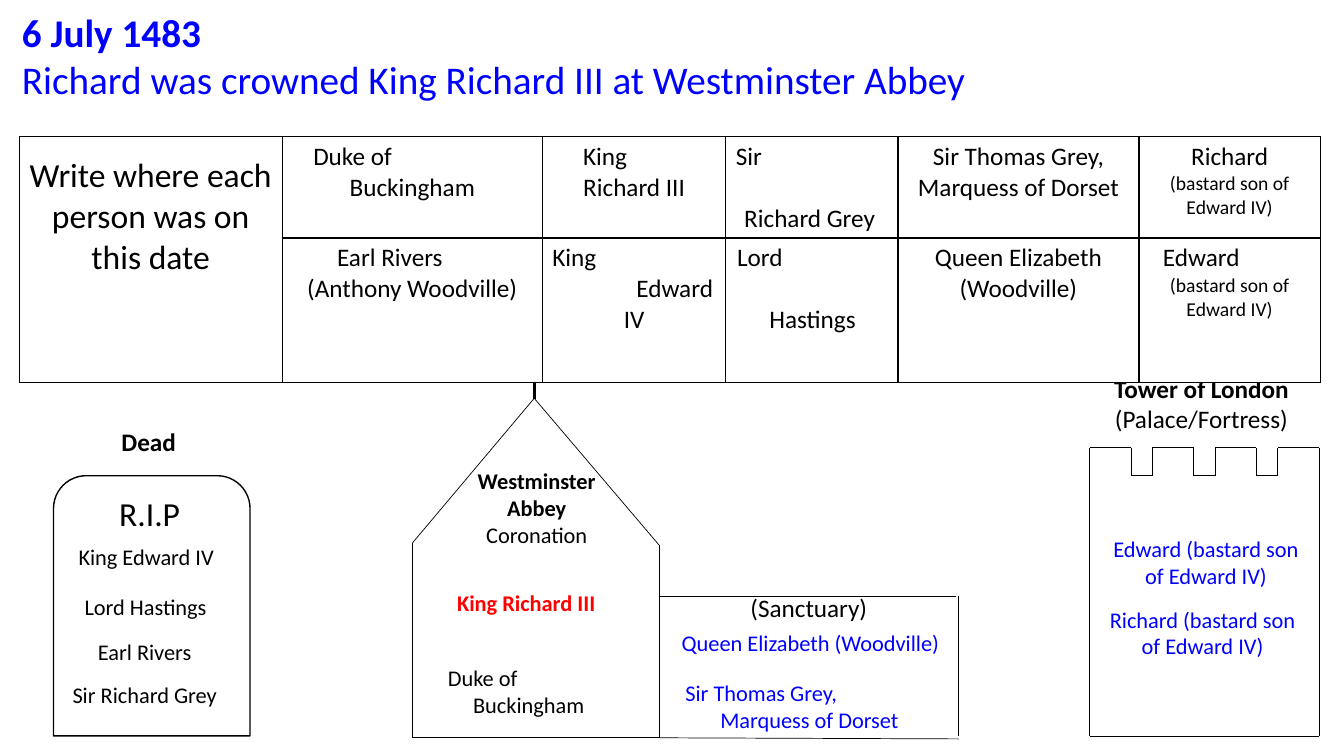
"""Build a slide placing each person on 6 July 1483."""
from dataclasses import dataclass
from itertools import pairwise

from lxml import etree
from pptx import Presentation
from pptx.dml.color import RGBColor
from pptx.enum.shapes import MSO_CONNECTOR, MSO_SHAPE
from pptx.enum.text import PP_ALIGN
from pptx.oxml.ns import qn
from pptx.util import Pt

BLACK = RGBColor(0, 0, 0)
WHITE = RGBColor(255, 255, 255)
BLUE = RGBColor(0, 0, 255)
RED = RGBColor(255, 0, 0)
FONT = "Calibri"
CENTER = PP_ALIGN.CENTER
LEFT = PP_ALIGN.LEFT
STRAIGHT = MSO_CONNECTOR.STRAIGHT
TOMBSTONE = MSO_SHAPE.ROUND_2_SAME_RECTANGLE


@dataclass(frozen=True)
class Line:
    text: str
    size: float = 16
    color: RGBColor = BLACK
    bold: bool = False
    indent: float | None = None
    before: float = 0


@dataclass(frozen=True)
class Label:
    left: float
    top: float
    width: float
    height: float
    lines: list[Line]


TITLE = Label(8.6, 2.2, 905, 90, [
    Line("6 July 1483", 28, BLUE, True, indent=0),
    Line("Richard was crowned King Richard III at Westminster Abbey", 28, BLUE, indent=0),
])
TOWER_NAME = Label(774.7, 262.8, 167, 51, [
    Line("Tower of London", 18, bold=True), Line("(Palace/Fortress)", 18),
])
LABELS = [
    Label(320.4, 330.5, 126, 67.7, [
        Line("Westminster Abbey", bold=True), Line("Coronation"),
    ]),
    Label(528.5, 419.8, 98.6, 28.8, [Line("(Sanctuary)", 18)]),
    Label(37.4, 348.5, 139, 36, [Line("R.I.P", 24)]),
    Label(36.7, 301, 139, 28.8, [Line("Dead", 18, bold=True)]),
    Label(34.6, 384.5, 139.7, 26.6, [Line("King Edward IV")]),
    Label(33.1, 419.8, 141.8, 26.6, [Line("Lord Hastings")]),
    Label(24.5, 452.2, 157.7, 26.6, [Line("Earl Rivers")]),
    Label(24.5, 483.1, 157.7, 26.6, [Line("Sir Richard Grey")]),
    Label(475.9, 445.7, 206, 26.6, [Line("Queen Elizabeth (Woodville)", color=BLUE)]),
    Label(474.5, 481.7, 207.4, 46, [
        Line("Sir Thomas Grey,", color=BLUE, indent=8),
        Line("Marquess of Dorset", color=BLUE, indent=33),
    ]),
    Label(297.4, 417.6, 157, 26.6, [Line("King Richard III", color=RED, bold=True)]),
    Label(298.8, 470.9, 157.7, 46, [
        Line("Duke of", indent=14), Line("Buckingham", indent=32),
    ]),
    Label(782.6, 378.7, 157.7, 46, [Line("Edward (bastard son of Edward IV)", color=BLUE)]),
    Label(780.5, 429.1, 157, 46, [Line("Richard (bastard son of Edward IV)", color=BLUE)]),
]

COLUMN_WIDTHS = [187.9, 185.8, 131, 123.1, 172.1, 129.6]
ROW_HEIGHTS = [72, 103]
INSTRUCTION = [Line("Write where each person was on this date", 24)]
BASTARD = Line("(bastard son of Edward IV)", 14)
PEOPLE = [
    [
        [Line("Duke of", 18, indent=15), Line("Buckingham", 18, indent=41)],
        [Line("King", 18, indent=22), Line("Richard III", 18, indent=22)],
        [Line("Sir", 18, indent=0), Line("Richard Grey", 18, indent=6, before=22)],
        [Line("Sir Thomas Grey, Marquess of Dorset", 18)],
        [Line("Richard", 18), BASTARD],
    ],
    [
        [Line("Earl Rivers", 18, indent=32), Line("(Anthony Woodville)", 18)],
        [Line("King", 18, indent=0), Line("Edward", 18, indent=60), Line("IV", 18, indent=51)],
        [Line("Lord", 18, indent=1), Line("Hastings", 18, indent=24, before=22)],
        [Line("Queen Elizabeth (Woodville)", 18)],
        [Line("Edward", 18, indent=10), BASTARD],
    ],
]

ABBEY = [(294.5, 527), (294.5, 388), (381.6, 284.5), (470.9, 389.5), (470.9, 527), (294.5, 527)]
SPIRE = [(381.6, 285), (381.6, 253)]
SANCTUARY_ROOF = [(470.5, 426.2), (682.6, 426.2)]
SANCTUARY_WALL = [(684.7, 425.5), (684.7, 525.6)]
SANCTUARY_BASE = [(470.5, 527), (684.7, 527.8)]
TOWER_LEFT, TOWER_TOP, TOWER_BASE = 778.3, 319.7, 526
MERLON, NOTCH, NOTCH_DEPTH = 29.6, 15.2, 20.2
MERLON_COUNT = 4


def tower_outline() -> list[tuple[float, float]]:
    """Return the closed outline of the tower with its battlements."""
    points = [(TOWER_LEFT, TOWER_BASE)]
    for index in range(MERLON_COUNT):
        left = TOWER_LEFT + index * (MERLON + NOTCH)
        right = left + MERLON
        if index:
            points += [(left, TOWER_TOP + NOTCH_DEPTH)]
        points += [(left, TOWER_TOP), (right, TOWER_TOP)]
        if index < MERLON_COUNT - 1:
            points += [(right, TOWER_TOP + NOTCH_DEPTH)]
    return points + [(right, TOWER_BASE), points[0]]


def draw_walls(slide, points: list[tuple[float, float]], weight: float = 0.5) -> None:
    """Join consecutive points with straight lines."""
    for (x1, y1), (x2, y2) in pairwise(points):
        wall = slide.shapes.add_connector(STRAIGHT, Pt(x1), Pt(y1), Pt(x2), Pt(y2))
        wall.line.color.rgb = BLACK
        wall.line.width = Pt(weight)
        etree.SubElement(wall._element.spPr, qn("a:effectLst"))


def write_lines(frame, lines: list[Line]) -> None:
    """Write one paragraph per line, indented or centred."""
    frame.word_wrap = True
    frame.text = "\n".join(line.text for line in lines)
    for paragraph, line in zip(frame.paragraphs, lines):
        paragraph.alignment = CENTER if line.indent is None else LEFT
        paragraph.space_before = Pt(line.before)
        if line.indent:
            paragraph._p.get_or_add_pPr().set("marL", str(Pt(line.indent)))
        font = paragraph.runs[0].font
        font.name, font.size, font.bold = FONT, Pt(line.size), line.bold
        font.color.rgb = line.color


def draw_label(slide, label: Label) -> None:
    """Draw a label in its own text box."""
    box = slide.shapes.add_textbox(
        Pt(label.left), Pt(label.top), Pt(label.width), Pt(label.height))
    write_lines(box.text_frame, label.lines)


def style_cell(cell) -> None:
    """Give a cell a white fill and thin black borders."""
    cell.fill.solid()
    cell.fill.fore_color.rgb = WHITE
    properties = cell._tc.get_or_add_tcPr()
    for index, side in enumerate(("lnL", "lnR", "lnT", "lnB")):
        border = etree.Element(qn(f"a:{side}"), w=str(Pt(1)))
        fill = etree.SubElement(border, qn("a:solidFill"))
        etree.SubElement(fill, qn("a:srgbClr"), val=str(BLACK))
        properties.insert(index, border)


def draw_people_table(slide) -> None:
    """Draw the table of people beside the instruction."""
    table = slide.shapes.add_table(
        len(ROW_HEIGHTS), len(COLUMN_WIDTHS), Pt(13.7), Pt(97.5),
        Pt(sum(COLUMN_WIDTHS)), Pt(sum(ROW_HEIGHTS))).table
    for column, width in zip(table.columns, COLUMN_WIDTHS):
        column.width = Pt(width)
    for row, height in zip(table.rows, ROW_HEIGHTS):
        row.height = Pt(height)
    for cell in table.iter_cells():
        style_cell(cell)
    instruction = table.cell(0, 0)
    instruction.merge(table.cell(1, 0))
    instruction.margin_top = Pt(13.4)
    write_lines(instruction.text_frame, INSTRUCTION)
    for row, people in enumerate(PEOPLE):
        for column, lines in enumerate(people, start=1):
            write_lines(table.cell(row, column).text_frame, lines)


def draw_tombstone(slide) -> None:
    """Draw the outline of the tombstone."""
    tombstone = slide.shapes.add_shape(TOMBSTONE, Pt(38.2), Pt(339.8), Pt(140.4), Pt(185.8))
    tombstone.shadow.inherit = False
    tombstone.fill.background()
    tombstone.line.color.rgb = BLACK
    tombstone.line.width = Pt(1)


def main() -> None:
    """Build and save the slide."""
    deck = Presentation()
    deck.slide_width, deck.slide_height = Pt(960), Pt(540)
    slide = deck.slides.add_slide(deck.slide_layouts[6])
    for outline in (ABBEY, tower_outline(), SANCTUARY_ROOF, SANCTUARY_WALL, SANCTUARY_BASE):
        draw_walls(slide, outline)
    draw_walls(slide, SPIRE, 2.25)
    draw_label(slide, TITLE)
    draw_label(slide, TOWER_NAME)
    draw_people_table(slide)
    draw_tombstone(slide)
    for label in LABELS:
        draw_label(slide, label)
    deck.save("out.pptx")


if __name__ == "__main__":
    main()
